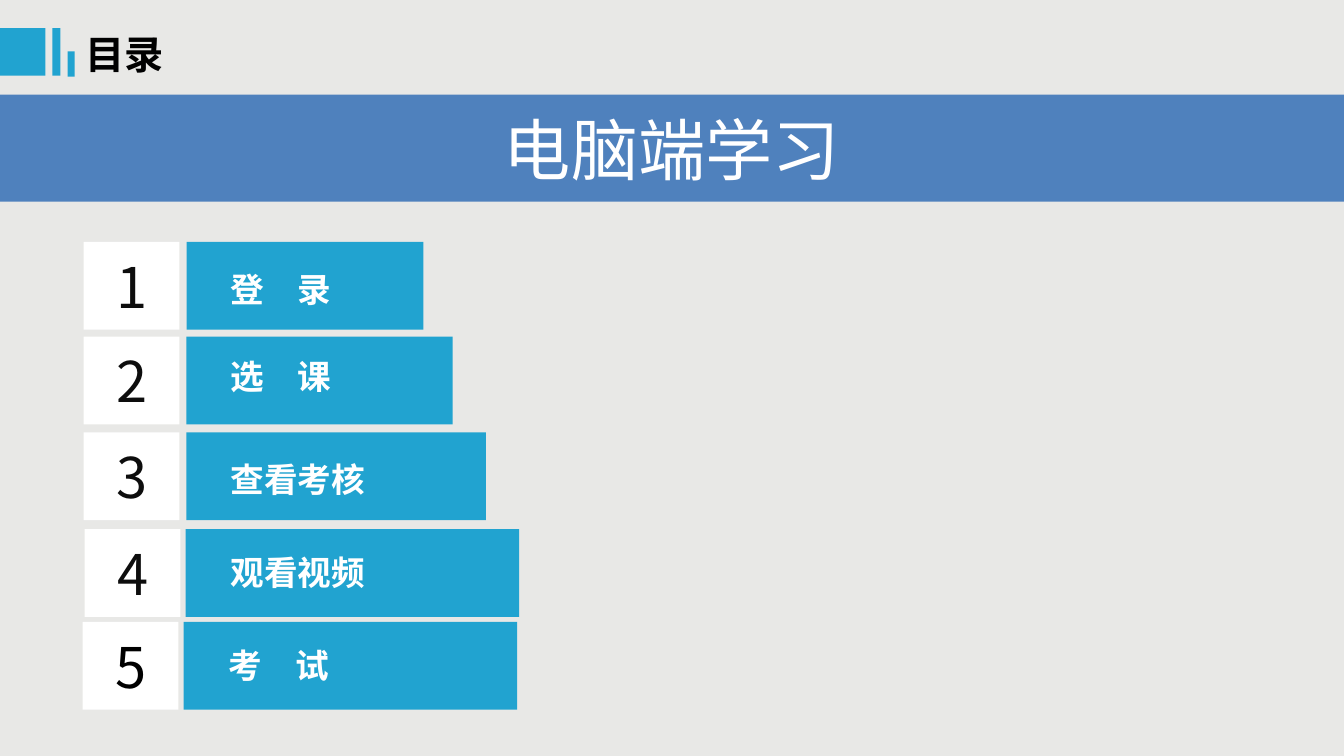
"""Build the contents slide of a guide to learning on a computer."""
from dataclasses import dataclass

from lxml import etree
from pptx import Presentation
from pptx.dml.color import RGBColor
from pptx.enum.shapes import MSO_SHAPE
from pptx.enum.text import MSO_ANCHOR, MSO_AUTO_SIZE, PP_ALIGN
from pptx.oxml.ns import qn
from pptx.shapes.autoshape import Shape
from pptx.slide import Slide
from pptx.util import Inches, Pt

RECT = MSO_SHAPE.RECTANGLE
TOP, MIDDLE = MSO_ANCHOR.TOP, MSO_ANCHOR.MIDDLE
LEFT, CENTER = PP_ALIGN.LEFT, PP_ALIGN.CENTER
GROW, FIXED = MSO_AUTO_SIZE.SHAPE_TO_FIT_TEXT, MSO_AUTO_SIZE.NONE


@dataclass(frozen=True)
class Theme:
    font: str = "Noto Sans CJK SC"
    page: str = "E8E8E6"
    accent: str = "21A3D0"
    banner: str = "4F81BD"
    white: str = "FFFFFF"
    black: str = "000000"
    number: str = "0D0D0D"
    title_size: int = 28
    banner_size: int = 48
    number_size: int = 40
    label_size: int = 24


@dataclass(frozen=True)
class Box:
    left: float
    top: float
    width: float
    height: float

    def lengths(self) -> list[int]:
        return [Inches(v) for v in (self.left, self.top, self.width, self.height)]


@dataclass(frozen=True)
class Row:
    label: str
    top: float
    number_left: float
    bar_left: float
    bar_width: float
    label_left: float
    label_top: float
    number_color: str


THEME = Theme()
SLIDE_WIDTH, SLIDE_HEIGHT = 13.33, 7.5
ROW_HEIGHT, NUMBER_WIDTH = 0.87, 0.95
LABEL_WIDTH, LABEL_HEIGHT = 1.95, 0.5
TITLE_BOX = Box(0.75, 0.25, 1.15, 0.57)
BANNER_BOX = Box(0, 0.94, SLIDE_WIDTH, 1.06)
TITLE_MARKS = (
    Box(0, 0.28, 0.45, 0.47),
    Box(0.52, 0.28, 0.08, 0.47),
    Box(0.67, 0.51, 0.07, 0.25),
)
ROWS = (
    Row("登　录", 2.4, 0.83, 1.85, 2.35, 2.19, 2.62, THEME.number),
    Row("选　课", 3.34, 0.83, 1.85, 2.64, 2.19, 3.48, THEME.number),
    Row("查看考核", 4.29, 0.83, 1.85, 2.97, 2.19, 4.5, THEME.number),
    Row("观看视频", 5.25, 0.84, 1.84, 3.31, 2.19, 5.43, THEME.number),
    Row("考　试", 6.17, 0.82, 1.82, 3.31, 2.17, 6.35, THEME.black),
)


def write(sp: Shape, text: str, size: int, color: str, heading: bool = False) -> None:
    """Write bold left text for a heading, or plain centred text otherwise."""
    tf = sp.text_frame
    frame_format = {
        "word_wrap": True,
        "auto_size": GROW if heading else FIXED,
        "vertical_anchor": TOP if heading else MIDDLE,
    }
    for name, value in frame_format.items():
        setattr(tf, name, value)
    p = tf.paragraphs[0]
    p.alignment = LEFT if heading else CENTER
    r = p.add_run()
    r.text = text
    font_format = {"name": THEME.font, "size": Pt(size), "bold": heading}
    for name, value in font_format.items():
        setattr(r.font, name, value)
    r.font.color.rgb = RGBColor.from_string(color)
    east_asian = etree.Element(qn("a:ea"), typeface=THEME.font)
    r.font._element.find(qn("a:latin")).addnext(east_asian)


def add_block(s: Slide, box: Box, fill: str) -> Shape:
    """Add a flat rectangle without an outline."""
    sp = s.shapes.add_shape(RECT, *box.lengths())
    sp.shadow.inherit = False
    sp.fill.solid()
    sp.fill.fore_color.rgb = RGBColor.from_string(fill)
    sp.line.fill.background()
    return sp


def add_title(s: Slide, text: str) -> None:
    """Move the title placeholder beside its marks and fill it."""
    sp = s.shapes.title
    sp.left, sp.top, sp.width, sp.height = TITLE_BOX.lengths()
    write(sp, text, THEME.title_size, THEME.black, heading=True)
    for box in TITLE_MARKS:
        add_block(s, box, THEME.accent)


def add_row(s: Slide, number: int, row: Row) -> None:
    """Add one numbered entry with its bar and label."""
    add_block(s, Box(row.bar_left, row.top, row.bar_width, ROW_HEIGHT), THEME.accent)
    sp = add_block(s, Box(row.number_left, row.top, NUMBER_WIDTH, ROW_HEIGHT), THEME.white)
    write(sp, str(number), THEME.number_size, row.number_color)
    box = Box(row.label_left, row.label_top, LABEL_WIDTH, LABEL_HEIGHT)
    sp = s.shapes.add_textbox(*box.lengths())
    write(sp, row.label, THEME.label_size, THEME.white, heading=True)


def main() -> None:
    """Build and save the slide."""
    prs = Presentation()
    prs.slide_width, prs.slide_height = Inches(SLIDE_WIDTH), Inches(SLIDE_HEIGHT)
    s = prs.slides.add_slide(prs.slide_layouts.get_by_name("Title Only"))
    s.background.fill.solid()
    s.background.fill.fore_color.rgb = RGBColor.from_string(THEME.page)
    add_title(s, "目录")
    banner = add_block(s, BANNER_BOX, THEME.banner)
    write(banner, "电脑端学习", THEME.banner_size, THEME.white)
    for number, row in enumerate(ROWS, start=1):
        add_row(s, number, row)
    prs.save("out.pptx")


if __name__ == "__main__":
    main()
